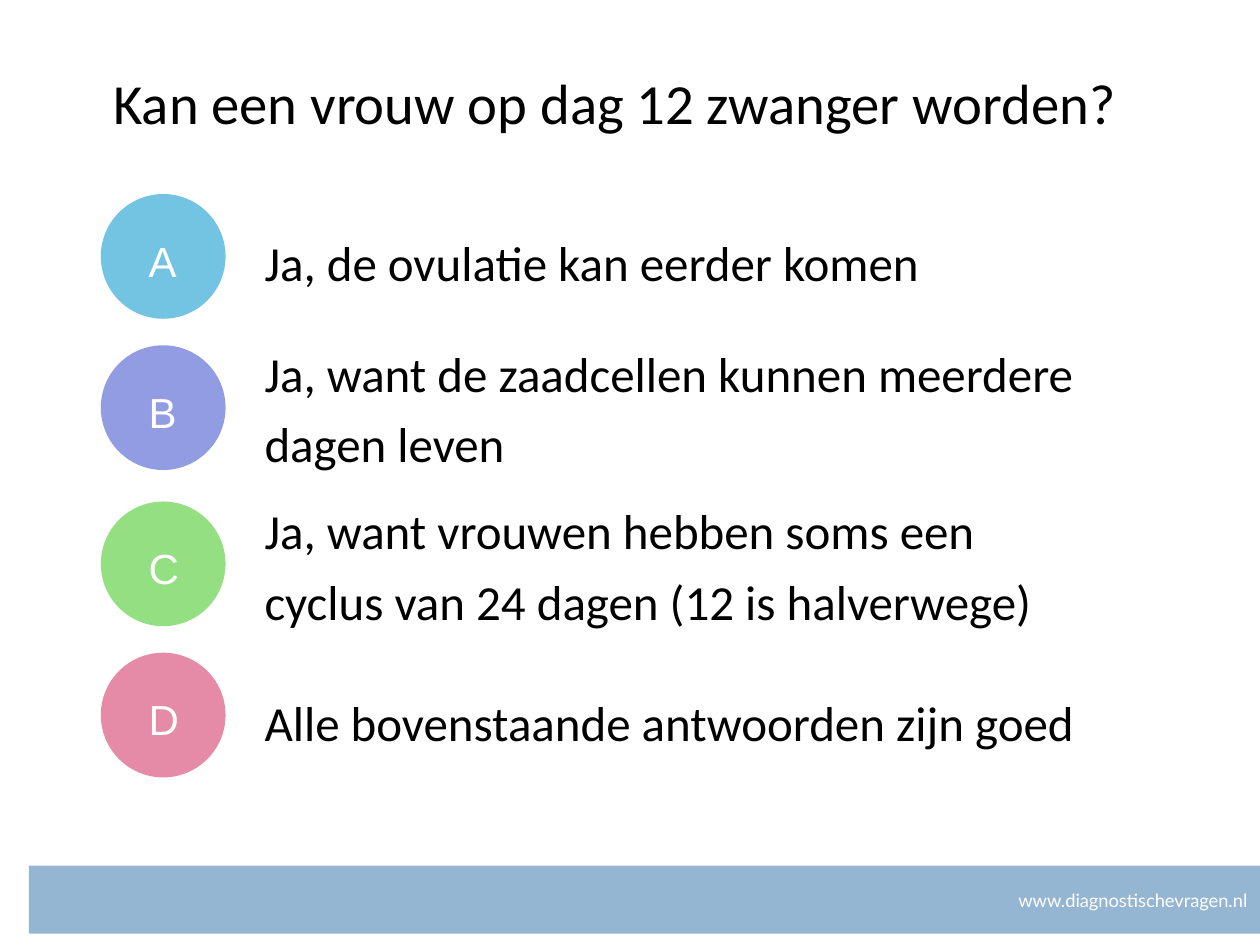
from dataclasses import dataclass

from pptx import Presentation
from pptx.dml.color import RGBColor
from pptx.enum.shapes import MSO_SHAPE
from pptx.enum.text import MSO_ANCHOR, PP_ALIGN
from pptx.util import Inches, Pt

RECT, OVAL = MSO_SHAPE.RECTANGLE, MSO_SHAPE.OVAL
TOP, MIDDLE = MSO_ANCHOR.TOP, MSO_ANCHOR.MIDDLE
LEFT, RIGHT = PP_ALIGN.LEFT, PP_ALIGN.RIGHT


@dataclass(frozen=True)
class Theme:
    black: str = "000000"
    white: str = "FFFFFF"
    bar: str = "94B6D2"
    blue: str = "73C3E3"
    violet: str = "919CE3"
    green: str = "95DF83"
    pink: str = "E58BA8"
    body: str = "Calibri"
    mark: str = "Arial"
    web: str = "Lato"
    title_size: float = 32.4
    body_size: float = 28
    mark_size: float = 24
    web_size: float = 10.5


THEME = Theme()

# Letter, colour, circle top, answer top, answer
ROWS = [
    ("A", THEME.blue, 1.54, 1.71, "Ja, de ovulatie kan eerder komen"),
    ("B", THEME.violet, 2.74, 2.87,
     "Ja, want de zaadcellen kunnen meerdere dagen leven"),
    ("C", THEME.green, 3.98, 4.12,
     "Ja, want vrouwen hebben soms een cyclus van 24 dagen (12 is halverwege)"),
    ("D", THEME.pink, 5.18, 5.36, "Alle bovenstaande antwoorden zijn goed"),
]


def inches(box):
    return [Inches(n) for n in box]


def write(shape, text, font, size, color, pad=(0.04, 0.04), anchor=MIDDLE,
          align=LEFT, space=1.2):
    frame = shape.text_frame
    frame.text = text
    frame.word_wrap = True
    frame.vertical_anchor = anchor
    frame.margin_left = frame.margin_right = Inches(pad[0])
    frame.margin_top = frame.margin_bottom = Inches(pad[1])
    para = frame.paragraphs[0]
    para.alignment = align
    para.line_spacing = space
    para.space_before = Pt(0)
    face = para.runs[0].font
    face.name = font
    face.size = Pt(size)
    face.color.rgb = RGBColor.from_string(color)


def add_fill(shapes, kind, box, color):
    shape = shapes.add_shape(kind, *inches(box))
    shape.shadow.inherit = False
    shape.fill.solid()
    shape.fill.fore_color.rgb = RGBColor.from_string(color)
    shape.line.fill.background()


def add_footer(slide, box):
    x, y, w, h = box
    add_fill(slide.shapes, RECT, box, THEME.bar)
    wide = 2.53
    note = slide.shapes.add_textbox(
        *inches((x + w - wide, y + 0.14, wide, 0.28)))
    write(note, "www.diagnostischevragen.nl", THEME.web, THEME.web_size,
          THEME.white, (0.1, 0.05), TOP, RIGHT, 1.0)


def add_badge(slide, box, letter, color):
    x, y, w, h = box
    group = slide.shapes.add_group_shape()
    add_fill(group.shapes, OVAL, box, color)
    label = group.shapes.add_textbox(
        *inches((x + 0.34, y + 0.25, 0.39, 0.47)))
    write(label, letter, THEME.mark, THEME.mark_size, THEME.white)


def add_answer(slide, box, text):
    label = slide.shapes.add_textbox(*inches(box))
    write(label, text, THEME.body, THEME.body_size, THEME.black)


def set_title(slide, box, text):
    title = slide.shapes.title
    title.left, title.top, title.width, title.height = inches(box)
    write(title, text, THEME.body, THEME.title_size, THEME.black,
          (0.1, 0.05), TOP, LEFT, 1.11)


def main():
    deck = Presentation()
    deck.slide_width, deck.slide_height = Inches(10), Inches(7.5)
    slide = deck.slides.add_slide(deck.slide_layouts[5])

    # Footer bar with web address
    add_footer(slide, (0.23, 6.87, 9.77, 0.54))

    # Lettered circles and their answers
    for letter, color, top, text_top, text in ROWS:
        add_badge(slide, (0.8, top, 0.99, 0.99), letter, color)
        add_answer(slide, (2.06, text_top, 6.73, 0.64), text)

    # Question
    set_title(slide, (0.8, 0.43, 9.2, 0.94),
              "Kan een vrouw op dag 12 zwanger worden?")
    deck.save("out.pptx")


if __name__ == "__main__":
    main()
